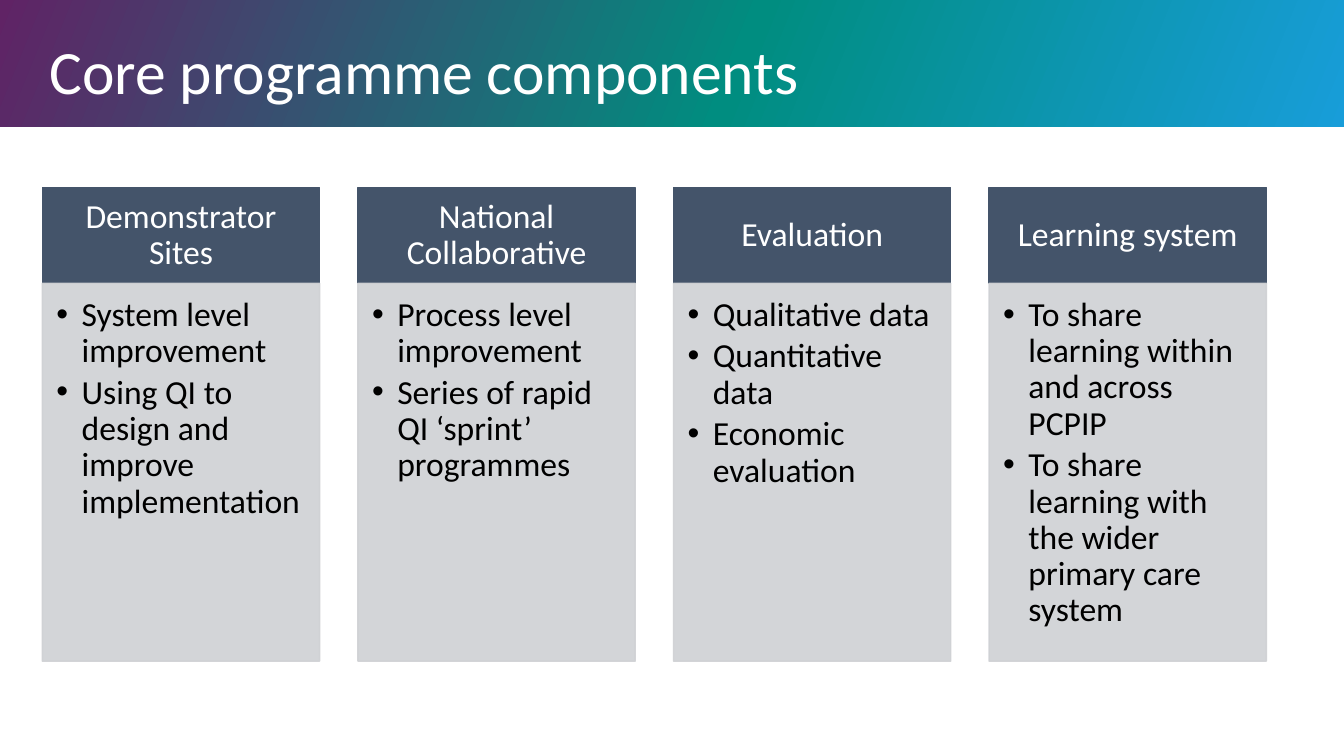
from copy import deepcopy

from lxml import etree
from pptx import Presentation
from pptx.dml.color import RGBColor
from pptx.enum.shapes import MSO_SHAPE
from pptx.enum.text import MSO_ANCHOR, PP_ALIGN
from pptx.oxml.ns import qn
from pptx.util import Emu, Pt

RECT = MSO_SHAPE.RECTANGLE
TOP, MIDDLE = MSO_ANCHOR.TOP, MSO_ANCHOR.MIDDLE
LEFT, CENTER = PP_ALIGN.LEFT, PP_ALIGN.CENTER

PX = 9144  # 100 px to the inch
FONT = "Calibri"
COLORS = {
    "white": "FFFFFF", "black": "000000", "header": "44546A", "body": "CFD1D4",
    "purple": "602365", "green": "008D80", "blue": "189DD9",
}

COLUMNS = [
    ("Demonstrator Sites",
     ["System level improvement", "Using QI to design and improve implementation"]),
    ("National Collaborative",
     ["Process level improvement", "Series of rapid QI ‘sprint’ programmes"]),
    ("Evaluation",
     ["Qualitative data", "Quantitative data", "Economic evaluation"]),
    ("Learning system",
     ["To share learning within and across PCPIP",
      "To share learning with the wider primary care system"]),
]


def px(n):
    return Emu(n * PX)


def rgb(name):
    return RGBColor.from_string(COLORS[name])


def add_bullet(p, indent):
    pPr = p._p.get_or_add_pPr()
    pPr.set("marL", str(px(indent)))
    pPr.set("indent", str(-px(indent)))
    etree.SubElement(pPr, qn("a:buFont")).set("typeface", "Arial")
    etree.SubElement(pPr, qn("a:buChar")).set("char", "•")


def write(tf, lines, size=24, color="black", align=LEFT, anchor=TOP,
          insets=(0, 0, 0, 0), bullet=0, after=0):
    tf.word_wrap = True
    tf.vertical_anchor = anchor
    tf.margin_left, tf.margin_top, tf.margin_right, tf.margin_bottom = map(px, insets)
    for i, line in enumerate(lines):
        p = tf.paragraphs[0] if i == 0 else tf.add_paragraph()
        if bullet:
            add_bullet(p, bullet)
        p.alignment = align
        p.line_spacing = 0.9
        p.space_before = Pt(0)
        p.space_after = Pt(after)
        r = p.add_run()
        r.text = line
        r.font.name, r.font.size = FONT, Pt(size)
        r.font.color.rgb = rgb(color)


class Deck:
    def __init__(self):
        self.prs = Presentation()
        self.prs.slide_width, self.prs.slide_height = px(1333), px(750)
        self.s = self.prs.slides.add_slide(self.prs.slide_layouts[6])

    def box(self, x, y, w, h, color=None, alpha=100):
        sp = self.s.shapes.add_shape(RECT, px(x), px(y), px(w), px(h))
        sp.shadow.inherit = False
        if color is None:
            sp.line.fill.background()
            return sp
        sp.fill.solid()
        sp.fill.fore_color.rgb = sp.line.color.rgb = rgb(color)
        sp.line.width = Pt(1)
        if alpha < 100:
            for clr in sp._element.spPr.iter(qn("a:srgbClr")):
                etree.SubElement(clr, qn("a:alpha")).set("val", str(alpha * 1000))
        return sp

    def gradient_box(self, x, y, w, h, stops, angle):
        sp = self.box(x, y, w, h)
        sp.fill.gradient()
        sp.fill.gradient_angle = 360 - angle
        gs_list = sp._element.spPr.find(".//" + qn("a:gsLst"))
        while len(gs_list) < len(stops):
            gs_list.append(deepcopy(gs_list[0]))
        for stop, (position, color) in zip(sp.fill.gradient_stops, stops):
            stop.position = position
            stop.color.rgb = rgb(color)

    def text(self, x, y, w, h, lines, **fmt):
        tb = self.s.shapes.add_textbox(px(x), px(y), px(w), px(h))
        write(tb.text_frame, lines, **fmt)

    def column(self, x, heading, points):
        head = self.box(x, 186, 275, 95, "header")
        write(head.text_frame, [heading], color="white", align=CENTER,
              anchor=MIDDLE, insets=(19, 11, 19, 11))
        body = self.box(x, 281, 275, 375, "body", alpha=90)
        write(body.text_frame, points, insets=(14, 14, 19, 21), bullet=25, after=3.8)


def main():
    deck = Deck()
    # Title banner
    deck.gradient_box(0, 0, 1333, 126,
                      [(0, "purple"), (0.55, "green"), (1, "blue")], angle=22)
    deck.text(49, 46, 1238, 55, ["Core programme components"],
              size=44, color="white", anchor=MIDDLE)
    # Four component columns
    for i, (heading, points) in enumerate(COLUMNS):
        deck.column(42 + 313 * i, heading, points)
    deck.prs.save("out.pptx")


if __name__ == "__main__":
    main()
